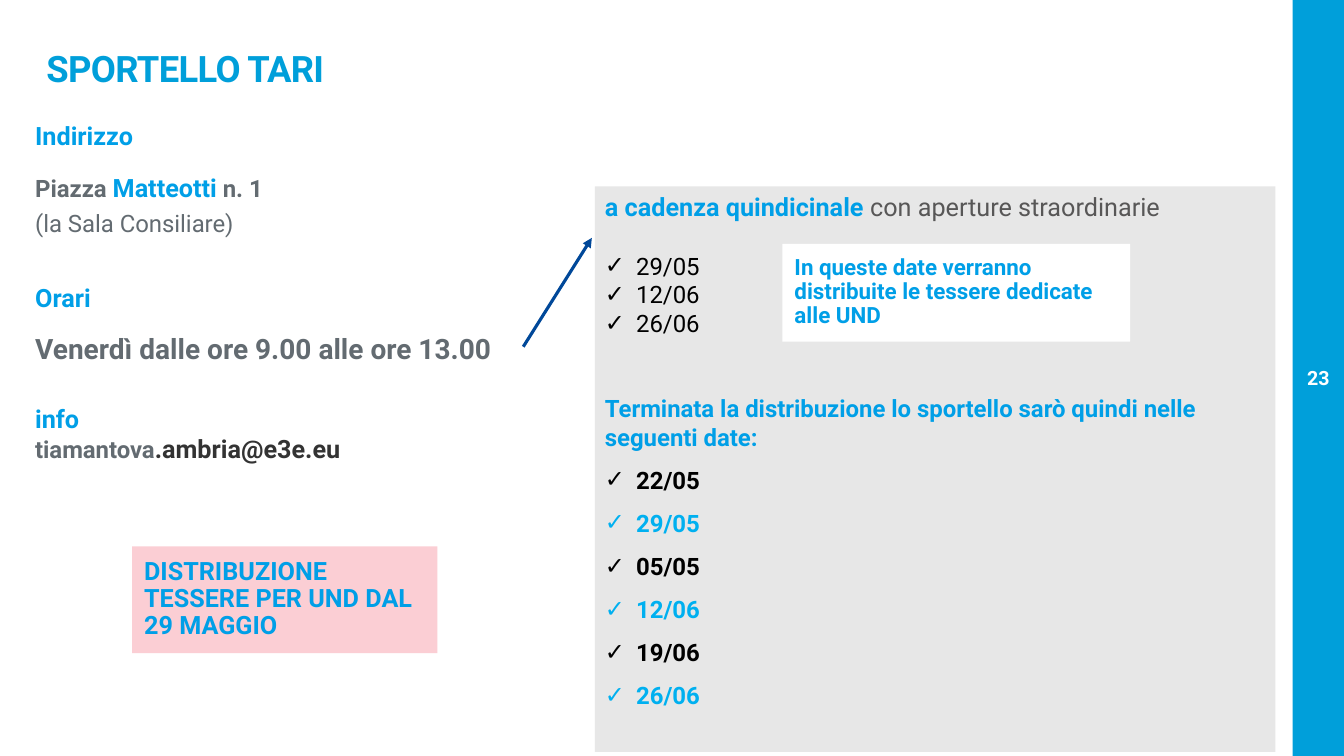
from dataclasses import dataclass

from lxml.etree import SubElement
from pptx import Presentation
from pptx.dml.color import RGBColor
from pptx.enum.shapes import MSO_CONNECTOR, MSO_SHAPE
from pptx.enum.text import MSO_ANCHOR, MSO_AUTO_SIZE, PP_ALIGN
from pptx.oxml.ns import qn
from pptx.util import Emu, Inches, Pt


@dataclass(frozen=True)
class Theme:
    font: str = "Roboto"
    bar: str = "009FDA"
    accent: str = "009FE7"
    sky: str = "00B0F0"
    grey: str = "636B71"
    soft: str = "585757"
    dark: str = "333333"
    black: str = "000000"
    white: str = "FFFFFF"
    panel: str = "E7E7E7"
    pink: str = "FBCED4"
    arrow: str = "004899"
    title: float = 26
    hours: float = 20
    head: float = 18
    body: float = 17.1
    note: float = 16
    number: float = 14


T = Theme()
W, H = 13.33, 7.5
INSETS = (0.1, 0.05, 0.1, 0.05)
CALLOUT_INSETS = (0.12,) * 4


def run(text, size, color, bold=True):
    return text, size, color, bold


def par(*runs, bullet=None, **fmt):
    return runs, bullet, fmt


def place(sp, box):
    for name, value in zip(("left", "top", "width", "height"), box):
        setattr(sp, name, Inches(value))


def write(sp, pars, insets=INSETS, anchor=MSO_ANCHOR.TOP, wrap=True):
    """Fill a shape with formatted paragraphs."""
    tf = sp.text_frame
    frame = {"word_wrap": wrap, "auto_size": MSO_AUTO_SIZE.NONE, "vertical_anchor": anchor}
    sides = ("margin_left", "margin_top", "margin_right", "margin_bottom")
    frame.update(zip(sides, map(Inches, insets)))
    for name, value in frame.items():
        setattr(tf, name, value)
    for i, (runs, bullet, fmt) in enumerate(pars):
        p = tf.add_paragraph() if i else tf.paragraphs[0]
        pPr = p._p.get_or_add_pPr()
        indent = Inches(0.31) if bullet else Emu(0)
        pPr.set("marL", str(indent))
        pPr.set("indent", str(-indent))
        if bullet:
            SubElement(pPr, qn("a:buChar")).set("char", bullet)
        else:
            SubElement(pPr, qn("a:buNone"))
        layout = {"alignment": PP_ALIGN.LEFT, "line_spacing": 1.0,
                  "space_before": Pt(0), "space_after": Pt(0)}
        for name, value in (layout | fmt).items():
            setattr(p, name, value)
        for text, size, color, bold in runs:
            if text == "\v":
                p.add_line_break()
                continue
            r = p.add_run()
            r.text = text
            for name, value in {"name": T.font, "size": Pt(size), "bold": bold}.items():
                setattr(r.font, name, value)
            r.font.color.rgb = RGBColor.from_string(color)


def add_rect(slide, box, fill):
    sp = slide.shapes.add_shape(MSO_SHAPE.RECTANGLE, *map(Inches, box))
    sp.shadow.inherit = False
    sp.fill.solid()
    sp.fill.fore_color.rgb = RGBColor.from_string(fill)
    sp.line.fill.background()
    return sp


def add_text(slide, box, pars, **frame):
    write(slide.shapes.add_textbox(*map(Inches, box)), pars, **frame)


def add_title(slide, box):
    sp = slide.shapes.title
    place(sp, box)
    write(sp, [par(run("SPORTELLO TARI", T.title, T.bar), line_spacing=0.9)],
          insets=(0, 0.05, 0.1, 0.05), anchor=MSO_ANCHOR.BOTTOM)
    sp.text_frame.paragraphs[0].runs[0].font._element.set("spc", "-50")


def add_sidebar(slide, box):
    left, top, width, height = box
    add_rect(slide, box, T.bar)
    add_text(slide, (left, top + height / 2 - 0.2, width, 0.4),
             [par(run("23", T.number, T.white), alignment=PP_ALIGN.CENTER)],
             insets=(0,) * 4, anchor=MSO_ANCHOR.MIDDLE, wrap=False)


def add_contacts(slide, box):
    """Address and hours at the top, e-mail below."""
    left, top, width, height = box
    heading = {"line_spacing": Pt(28.8), "space_after": Pt(12)}
    line = {"line_spacing": Pt(25.2)}
    add_text(slide, (left, top, width, 2.63), [
        par(run("Indirizzo", T.head, T.accent), **heading),
        par(run("Piazza ", T.body, T.grey), run("Matteotti", T.head, T.accent),
            run(" n. 1", T.body, T.grey), run("\v", T.body, T.grey),
            run("(la Sala Consiliare)", T.body, T.grey, False), **line),
        par(run("Orari", T.head, T.accent), space_before=Pt(25.2), **heading),
        par(run("Venerdì\u00a0dalle ore 9.00 alle ore 13.00", T.hours, T.grey), **line),
    ])
    add_text(slide, (left, top + height - 0.71, 6.67, 0.71), [
        par(run("info", T.head, T.accent)),
        par(run("tiamantova", T.body, T.grey), run(".ambria@e3e.eu", T.head, T.dark)),
    ])


def add_dates(slide, box):
    """Grey panel with the two lists of opening dates."""
    sp = slide.placeholders[1]
    place(sp, box)
    sp.fill.solid()
    sp.fill.fore_color.rgb = RGBColor.from_string(T.panel)
    card_days = ("29/05", "12/06", "26/06")
    desk_days = ("22/05", "29/05", "05/05", "12/06", "19/06", "26/06")
    pars = [par(run("a cadenza quindicinale ", T.head, T.accent),
                run("con aperture straordinarie", T.head, T.soft, False))]
    pars += [par(run(day, T.body, T.black, False), bullet="✓",
                 space_before=Pt(0 if i else 21)) for i, day in enumerate(card_days)]
    pars.append(par(run("Terminata la distribuzione lo sportello sarò quindi nelle "
                        "seguenti date:", T.body, T.accent), space_before=Pt(40)))
    pars += [par(run(day, T.body, T.sky if day in card_days else T.black),
                 bullet="✓", line_spacing=1.5) for day in desk_days]
    write(sp, pars)


def add_callout(slide, box, text, size, fill):
    write(add_rect(slide, box, fill),
          [par(run(text, size, T.accent), line_spacing=0.9)], insets=CALLOUT_INSETS)


def add_arrow(slide, start, end):
    line = slide.shapes.add_connector(MSO_CONNECTOR.STRAIGHT, *map(Inches, start + end))
    line.line.color.rgb = RGBColor.from_string(T.arrow)
    line.line.width = Pt(2.25)
    SubElement(line.line._get_or_add_ln(), qn("a:tailEnd")).set("type", "triangle")
    SubElement(line._element.spPr, qn("a:effectLst"))


def main():
    prs = Presentation()
    prs.slide_width, prs.slide_height = Inches(W), Inches(H)
    slide = prs.slides.add_slide(prs.slide_layouts[1])

    # Frame of the slide
    add_sidebar(slide, (W - 0.51, 0, 0.51, H))
    add_title(slide, (0.46, 0.45, 12.13, 0.5))

    # Left column, arrow and dates panel
    add_contacts(slide, (0.25, 1.04, 5.15, 3.62))
    add_arrow(slide, (5.19, 3.44), (5.87, 2.36))
    add_dates(slide, (5.9, 1.85, 6.75, 5.61))

    # Highlighted notices
    add_callout(slide, (7.76, 2.42, 3.45, 0.97),
                "In queste date verranno distribuite le tessere dedicate alle UND",
                T.note, T.white)
    add_callout(slide, (1.31, 5.42, 3.03, 1.06),
                "DISTRIBUZIONE TESSERE PER UND DAL 29 MAGGIO", T.head, T.pink)
    prs.save("out.pptx")


if __name__ == "__main__":
    main()
